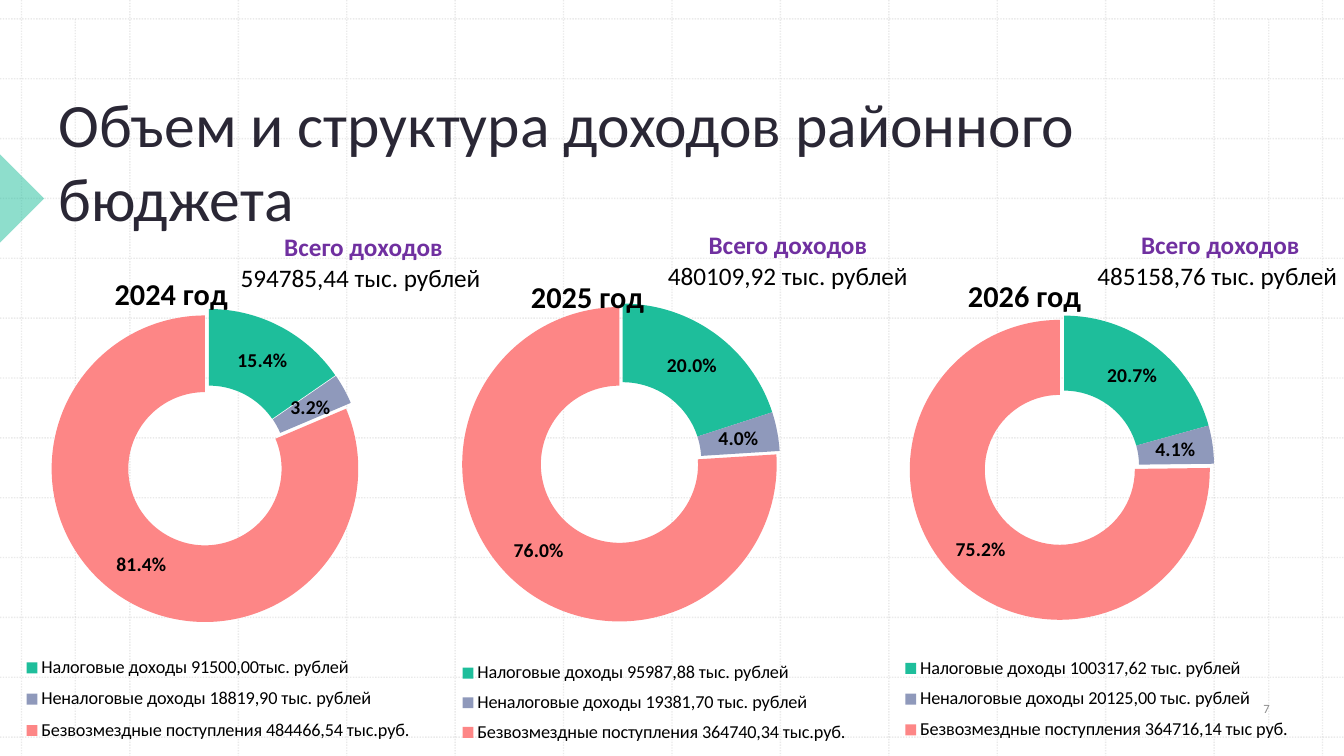
from dataclasses import dataclass

from lxml import etree
from pptx import Presentation
from pptx import util as u
from pptx.chart import data as cd
from pptx.dml import color
from pptx.enum import chart as ch, dml, shapes, text
from pptx.oxml import ns


@dataclass(frozen=True)
class Theme:
    font: str = "Calibri"
    ink: str = "2A2735"
    black: str = "000000"
    accent: str = "7030A0"
    muted: str = "8C8C8C"
    grid: str = "BCBCBC"
    marker: str = "1EBE9B"
    slices: tuple[str, ...] = ("1EBE9B", "8F99BB", "FD8686")
    title: float = 44
    year: float = 21.6
    total: float = 18
    label: float = 14
    legend: float = 13
    number: float = 9


@dataclass(frozen=True)
class Box:
    x: float
    y: float
    w: float
    h: float

    def emu(self) -> tuple[int, int, int, int]:
        return across(self.x), down(self.y), across(self.w), down(self.h)


@dataclass(frozen=True)
class Span:
    text: str
    size: float
    color: str
    bold: bool = False


@dataclass(frozen=True)
class Budget:
    year: str
    total: str
    cats: tuple[str, str, str]
    shares: tuple[float, float, float]
    frame: Box
    caption: Box
    plot: Box
    legend: Box
    heading: tuple[float, float]
    pull: int
    explode: int = 0


THEME = Theme()
WIDTH, HEIGHT = u.Inches(13.33), u.Inches(7.5)

BUDGETS = (
    Budget("2024 год", "594785,44 тыс. рублей ",
           ("Налоговые доходы 91500,00тыс. рублей",
            "Неналоговые доходы 18819,90 тыс. рублей",
            "Безвозмездные поступления 484466,54 тыс.руб."),
           (0.154, 0.032, 0.814),
           Box(-5.25, 33.2, 40.5, 71.87), Box(17.03, 30, 20.03, 9.47),
           Box(22.8, 10.6, 56.9, 57.1), Box(17, 73, 72, 19), (33, 3), 8, 2),
    Budget("2025 год", "480109,92 тыс. рублей",
           ("Налоговые доходы 95987,88 тыс. рублей",
            "Неналоговые доходы 19381,70 тыс. рублей",
            "Безвозмездные поступления 364740,34 тыс.руб."),
           (0.2, 0.04, 0.76),
           Box(24.98, 34.4, 45.53, 66.93), Box(48.83, 29.73, 19.58, 9.47),
           Box(21.2, 8.6, 51.4, 62.2), Box(20, 78, 64, 19), (31, 2), 6),
    Budget("2026 год", "485158,76 тыс. рублей ",
           ("Налоговые доходы 100317,62 тыс. рублей",
            "Неналоговые доходы 20125,00 тыс. рублей",
            "Безвозмездные поступления 364716,14 тыс руб."),
           (0.207, 0.041, 0.752),
           Box(58.73, 34.93, 41.55, 66.93), Box(80.78, 29.73, 20.03, 9.47),
           Box(22.3, 10.2, 53.8, 59.3), Box(20, 76, 70, 20), (31, 1), 8),
)


def across(share: float) -> int:
    return round(WIDTH * share / 100)


def down(share: float) -> int:
    return round(HEIGHT * share / 100)


def rgb(value: str) -> color.RGBColor:
    return color.RGBColor.from_string(value)


def set_font(font, size: float, fill: str, bold: bool = False) -> None:
    font.name, font.size, font.bold = THEME.font, u.Pt(size), bold
    font.color.rgb = rgb(fill)


def node(tag: str, val: object):
    el = etree.Element(ns.qn(tag))
    el.set("val", str(val))
    return el


def set_alpha(shape, percent: int) -> None:
    clr = next(shape.element.spPr.iter(ns.qn("a:srgbClr")))
    clr.append(node("a:alpha", percent * 1000))


def add_rule(s, x1: float, y1: float, x2: float, y2: float) -> None:
    line = s.shapes.add_connector(shapes.MSO_CONNECTOR.STRAIGHT,
                                  across(x1), down(y1), across(x2), down(y2))
    line.line.color.rgb = rgb(THEME.grid)
    line.line.width = u.Pt(1)
    line.line.dash_style = dml.MSO_LINE.ROUND_DOT
    set_alpha(line, 30)
    etree.SubElement(line.element.spPr, ns.qn("a:effectLst"))


def add_grid(s) -> None:
    left, right, top, bottom, count = 1.6, 98.4, 2.5, 97.5, 12
    for i in range(count + 1):
        x = left + (right - left) * i / count
        y = top + (bottom - top) * i / count
        add_rule(s, x, 0, x, 100)
        add_rule(s, 0, y, 100, y)
    for x in (5.6, 94.4):
        add_rule(s, x, top, x, bottom)


def add_marker(s) -> None:
    sp = s.shapes.add_shape(shapes.MSO_SHAPE.RIGHT_TRIANGLE,
                            *Box(-2.33, 22.13, 4.65, 8.27).emu())
    sp.rotation = 225
    sp.shadow.inherit = False
    sp.fill.solid()
    sp.fill.fore_color.rgb = rgb(THEME.marker)
    sp.line.fill.background()
    set_alpha(sp, 50)


def add_text(s, box: Box, lines: tuple[Span, ...], align=text.PP_ALIGN.CENTER,
             anchor=text.MSO_ANCHOR.TOP, wrap: bool = True) -> None:
    tf = s.shapes.add_textbox(*box.emu()).text_frame
    tf.word_wrap, tf.vertical_anchor = wrap, anchor
    if not wrap:
        tf.auto_size = text.MSO_AUTO_SIZE.SHAPE_TO_FIT_TEXT
    for i, line in enumerate(lines):
        p = tf.add_paragraph() if i else tf.paragraphs[0]
        p.alignment = align
        r = p.add_run()
        r.text = line.text
        set_font(r.font, line.size, line.color, line.bold)


def set_layout(parent, index: int, x: float, y: float,
               w: float = 0, h: float = 0, inner: bool = False) -> None:
    for old in parent.findall(ns.qn("c:layout")):
        parent.remove(old)
    layout = etree.Element(ns.qn("c:layout"))
    manual = etree.SubElement(layout, ns.qn("c:manualLayout"))
    if inner:
        manual.append(node("c:layoutTarget", "inner"))
    manual.extend([node("c:xMode", "edge"), node("c:yMode", "edge")])
    for tag, share in (("x", x), ("y", y), ("w", w), ("h", h)):
        if share or tag in "xy":
            manual.append(node(f"c:{tag}", round(share / 100, 3)))
    parent.insert(index, layout)


def add_doughnut(s, b: Budget) -> None:
    data = cd.CategoryChartData(number_format="0.0%")
    data.categories = b.cats
    data.add_series(b.year, b.shares)
    chart = s.shapes.add_chart(ch.XL_CHART_TYPE.DOUGHNUT, *b.frame.emu(), data).chart
    set_font(chart.font, THEME.total, THEME.black)

    chart.has_title = True
    r = chart.chart_title.text_frame.paragraphs[0].add_run()
    r.text = b.year
    set_font(r.font, THEME.year, THEME.black, True)
    set_layout(chart.chart_title.element if hasattr(chart.chart_title, "element")
               else chart.element.find(".//" + ns.qn("c:title")), 1, *b.heading)

    chart.has_legend = True
    chart.legend.position = ch.XL_LEGEND_POSITION.BOTTOM
    chart.legend.include_in_layout = False
    set_font(chart.legend.font, THEME.legend, THEME.black)
    g = b.legend
    set_layout(chart.element.find(".//" + ns.qn("c:legend")), 1, g.x, g.y, g.w, g.h)
    g = b.plot
    set_layout(chart.element.find(".//" + ns.qn("c:plotArea")), 0, g.x, g.y, g.w, g.h, True)

    plot = chart.plots[0]
    plot.vary_by_categories = True
    series = plot.series[0]
    for i, fill in enumerate(THEME.slices):
        fmt = series.points[i].format
        fmt.fill.solid()
        fmt.fill.fore_color.rgb = rgb(fill)
    points = chart.element.findall(".//" + ns.qn("c:dPt"))
    points[-1].find(ns.qn("c:spPr")).addprevious(node("c:explosion", b.pull))
    if b.explode:
        points[0].addprevious(node("c:explosion", b.explode))

    labels = series.data_labels
    labels.show_value, labels.show_percentage = True, False
    labels.number_format, labels.number_format_is_linked = "0.0%", False
    set_font(labels.font, THEME.label, THEME.black, True)


def main() -> None:
    prs = Presentation()
    prs.slide_width, prs.slide_height = WIDTH, HEIGHT
    s = prs.slides.add_slide(prs.slide_layouts[6])
    add_grid(s)
    add_marker(s)
    add_text(s, Box(3.6, 10.53, 86.78, 21.07),
             (Span("Объем и структура доходов районного бюджета", THEME.title, THEME.ink),),
             text.PP_ALIGN.LEFT, text.MSO_ANCHOR.BOTTOM)
    add_text(s, Box(90.22, 90.67, 8.03, 6.13), (Span("7", THEME.number, THEME.muted),),
             anchor=text.MSO_ANCHOR.MIDDLE)
    for b in BUDGETS:
        add_doughnut(s, b)
    for b in BUDGETS:
        add_text(s, b.caption, (Span("Всего доходов", THEME.total, THEME.accent, True),
                                Span(b.total, THEME.total, THEME.black)), wrap=False)
    prs.save("out.pptx")


if __name__ == "__main__":
    main()
